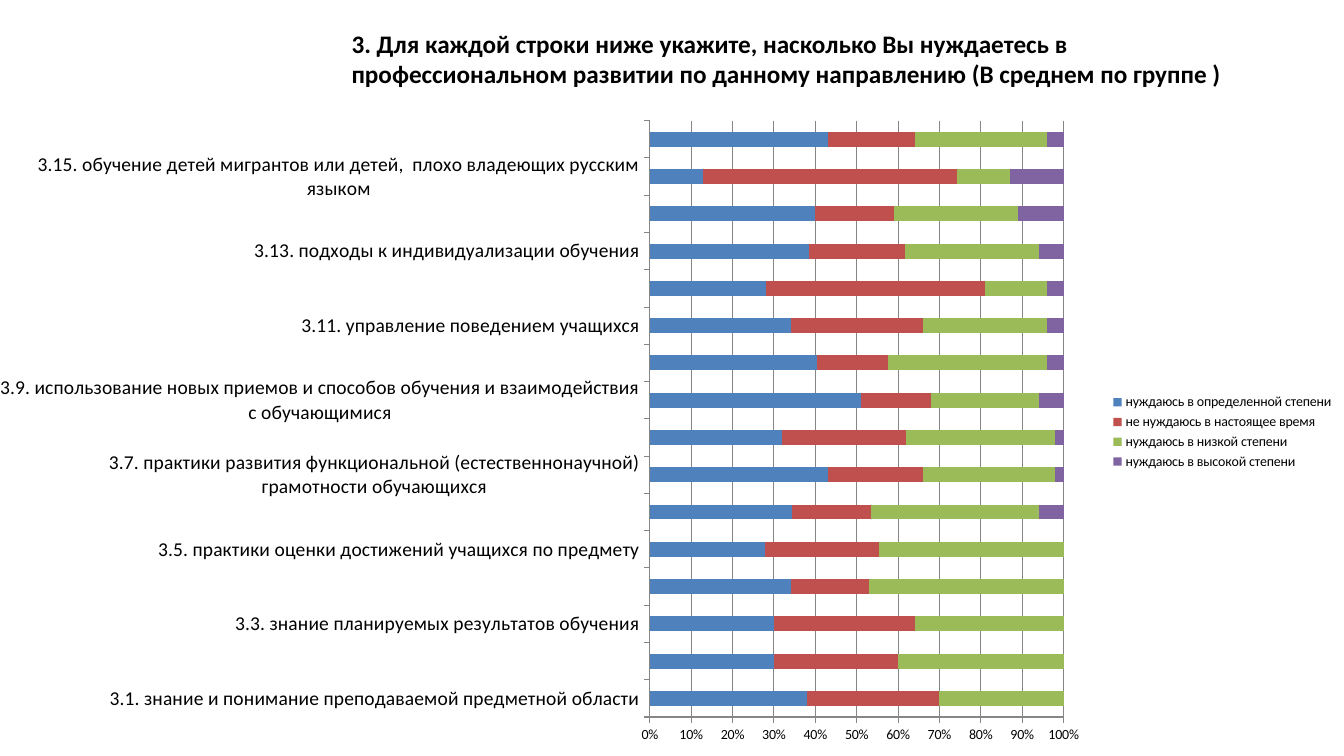
from typing import NamedTuple

from lxml.etree import SubElement
from pptx import Presentation
from pptx.chart.chart import Chart
from pptx.chart.data import CategoryChartData
from pptx.dml.color import RGBColor
from pptx.enum.chart import XL_CHART_TYPE, XL_LEGEND_POSITION, XL_TICK_MARK
from pptx.oxml.ns import qn
from pptx.util import Pt


class Answer(NamedTuple):
    name: str
    percents: list[int]
    fill: str


FONT = "Calibri"
TITLE = ("3. Для каждой строки ниже укажите, насколько Вы нуждаетесь в "
         "профессиональном развитии по данному направлению (В среднем по группе )")
DIRECTIONS = [
    "знание и понимание преподаваемой предметной области",
    "знание теории и методики обучения предмету",
    "знание планируемых результатов обучения",
    "практики достижения планируемых результатов по предмету",
    "практики оценки достижений учащихся по предмету",
    "анализ и интерпретация результатов диагностики и мониторинга",
    "практики развития функциональной (естественнонаучной) грамотности обучающихся",
    "практики развития функциональной (читательской)  грамотности",
    "использование новых приемов и способов обучения и взаимодействия с обучающимися",
    "использование в преподавании ИКТ, повышение цифровой грамотности",
    "управление поведением учащихся",
    "управление школой",
    "подходы к индивидуализации обучения",
    "обучение детей со специальными образовательными нуждами",
    "обучение детей мигрантов или детей,  плохо владеющих русским языком",
    "исследовательская и проектная деятельность",
]
ANSWERS = [
    Answer("нуждаюсь в определенной степени",
           [38, 30, 30, 34, 28, 34, 43, 32, 51, 40, 34, 28, 38, 40, 13, 43], "4F81BD"),
    Answer("не нуждаюсь в настоящее время",
           [32, 30, 34, 19, 28, 19, 23, 30, 17, 17, 32, 53, 23, 19, 62, 21], "C0504D"),
    Answer("нуждаюсь в низкой степени",
           [30, 40, 36, 47, 45, 40, 32, 36, 26, 38, 30, 15, 32, 30, 13, 32], "9BBB59"),
    Answer("нуждаюсь в высокой степени",
           [0, 0, 0, 0, 0, 6, 2, 2, 6, 4, 4, 4, 6, 11, 13, 4], "8064A2"),
]


def color(value: str) -> RGBColor:
    return RGBColor.from_string(value)


def format_font(font, size: float, bold: bool = False, fill: str = "000000") -> None:
    font.name = FONT
    font.size = Pt(size)
    font.bold = bold
    font.color.rgb = color(fill)


def add_text(page, text: str, left: float, top: float, width: float, height: float,
             **text_format) -> None:
    box = page.shapes.add_textbox(Pt(left), Pt(top), Pt(width), Pt(height))
    box.text_frame.word_wrap = True
    span = box.text_frame.paragraphs[0].add_run()
    span.text = text
    format_font(span.font, **text_format)


def place_plot(chart: Chart, **fractions: float) -> None:
    """Fix the bar area, without its labels, as fractions of the chart."""
    plot_area = chart.plots[0]._element.getparent()
    layout = plot_area.find(qn("c:layout"))
    if layout is None:
        layout = SubElement(plot_area, qn("c:layout"))
        plot_area.insert(0, layout)
    manual = SubElement(layout, qn("c:manualLayout"))
    settings = {"layoutTarget": "inner", "xMode": "edge", "yMode": "edge", **fractions}
    for tag, value in settings.items():
        SubElement(manual, qn(f"c:{tag}")).set("val", str(value))


def add_answer_chart(page, left: float, top: float, width: float, height: float) -> None:
    data = CategoryChartData(number_format="General")
    data.categories = [f"3.{number}. {name}" for number, name in enumerate(DIRECTIONS, 1)]
    for answer in ANSWERS:
        data.add_series(answer.name, answer.percents)
    chart = page.shapes.add_chart(XL_CHART_TYPE.BAR_STACKED_100, Pt(left), Pt(top),
                                  Pt(width), Pt(height), data).chart
    chart.has_title = False
    format_font(chart.font, 10)

    # Bars
    plot = chart.plots[0]
    plot.gap_width = 150
    plot.overlap = 100
    plot.vary_by_categories = False
    for series, answer in zip(plot.series, ANSWERS):
        series.format.fill.solid()
        series.format.fill.fore_color.rgb = color(answer.fill)
    place_plot(chart, x=0.48, y=0.02, w=0.31, h=0.92)

    # Axes and grid
    value_axis = chart.value_axis
    value_axis.minimum_scale, value_axis.maximum_scale = 0, 1
    value_axis.major_unit = 0.1
    value_axis.has_major_gridlines = True
    value_axis.tick_labels.number_format = "0%"
    value_axis.tick_labels.number_format_is_linked = False
    for axis, size in ((chart.category_axis, 14), (value_axis, 10)):
        axis.major_tick_mark = XL_TICK_MARK.OUTSIDE
        axis.minor_tick_mark = XL_TICK_MARK.NONE
        format_font(axis.tick_labels.font, size)
    for lines in (chart.category_axis, value_axis, value_axis.major_gridlines):
        lines.format.line.color.rgb = color("868686")
        lines.format.line.width = Pt(0.75)

    # Legend
    chart.has_legend = True
    chart.legend.position = XL_LEGEND_POSITION.RIGHT
    chart.legend.include_in_layout = False
    format_font(chart.legend.font, 10)


def main() -> None:
    deck = Presentation()
    deck.slide_width, deck.slide_height = Pt(960), Pt(540)
    page = deck.slides.add_slide(deck.slide_layouts[6])
    add_text(page, TITLE, 244, 16.5, 646.5, 72.5, size=18, bold=True)
    add_answer_chart(page, 0, 77, 960, 463)
    deck.save("out.pptx")


if __name__ == "__main__":
    main()
